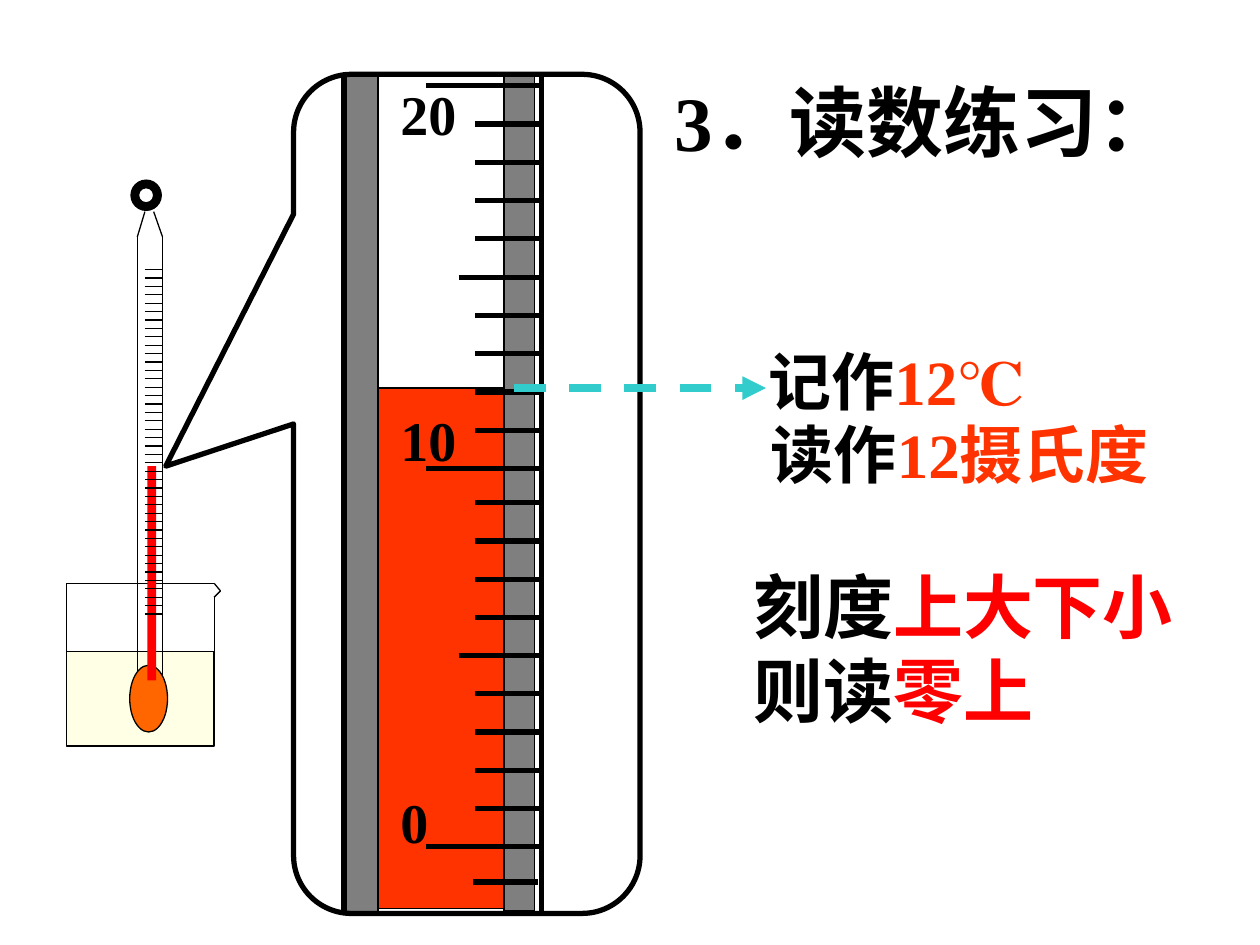
from lxml import etree
from pptx import Presentation
from pptx.dml.color import RGBColor
from pptx.enum.dml import MSO_LINE
from pptx.enum.shapes import MSO_CONNECTOR, MSO_SHAPE
from pptx.enum.text import MSO_ANCHOR, PP_ALIGN
from pptx.oxml.ns import qn
from pptx.util import Inches, Pt

STRAIGHT = MSO_CONNECTOR.STRAIGHT
RECT = MSO_SHAPE.RECTANGLE
OVAL = MSO_SHAPE.OVAL
DONUT = MSO_SHAPE.DONUT
BUBBLE = MSO_SHAPE.ROUNDED_RECTANGULAR_CALLOUT
DASH = MSO_LINE.DASH
LEFT = PP_ALIGN.LEFT
TOP = MSO_ANCHOR.TOP
MIDDLE = MSO_ANCHOR.MIDDLE

FONT = "Times New Roman"
COLORS = {
    "black": "000000",
    "water": "FFFFCC",
    "bulb": "FF6600",
    "red": "FF0000",
    "fluid": "FF3300",
    "arrow": "33CCCC",
}


def rgb(name):
    """Return the named colour."""
    return RGBColor.from_string(COLORS[name])


def add_line(shapes, start, end, width=0.75, color="black"):
    """Draw a straight line between two points in inches."""
    line = shapes.add_connector(STRAIGHT, *map(Inches, start + end))
    line.line.width = Pt(width)
    line.line.color.rgb = rgb(color)
    etree.SubElement(line._element.spPr, qn("a:effectLst"))
    return line


def add_path(shapes, points):
    """Join successive points with thin lines."""
    for start, end in zip(points, points[1:]):
        add_line(shapes, start, end)


def add_ticks(shapes, left, right, tops, width):
    """Draw level marks at the given heights."""
    for top in tops:
        add_line(shapes, (left, top), (right, top), width)


def add_form(shapes, kind, box, fill=None, width=0.75, clear=False):
    """Draw a preset shape, with an optional half-clear fill."""
    form = shapes.add_shape(kind, *map(Inches, box))
    form.shadow.inherit = False
    if fill:
        form.fill.solid()
        form.fill.fore_color.rgb = rgb(fill)
    else:
        form.fill.background()
    if clear:
        color = form._element.spPr.find(qn("a:solidFill"))[0]
        etree.SubElement(color, qn("a:alpha"), val="50000")
    if width:
        form.line.width = Pt(width)
        form.line.color.rgb = rgb("black")
    else:
        form.line.fill.background()
    return form


def set_text(shape, parts, size, anchor=TOP):
    """Fill a shape with bold runs of (text, colour)."""
    frame = shape.text_frame
    frame.word_wrap = True
    frame.vertical_anchor = anchor
    par = frame.paragraphs[0]
    par.alignment = LEFT
    for text, color in parts:
        run = par.add_run()
        run.text = text
        run.font.name = FONT
        run.font.size = Pt(size)
        run.font.bold = True
        run.font.color.rgb = rgb(color)


def add_text(shapes, box, parts, size):
    """Add a text box."""
    set_text(shapes.add_textbox(*map(Inches, box)), parts, size)


def draw_glass(shapes):
    """Draw the beaker with the small thermometer in it."""
    add_path(shapes, [(0.53, 4.63), (1.7, 4.63), (1.75, 4.69), (1.7, 4.74),
                      (1.7, 5.92), (0.53, 5.92), (0.53, 4.63)])
    add_form(shapes, RECT, (0.53, 5.17, 1.17, 0.75), "water", clear=True)
    for side, neck in ((1.09, 1.15), (1.29, 1.22)):
        add_path(shapes, [(side, 5.54), (side, 1.88), (neck, 1.68)])
    add_form(shapes, DONUT, (1.04, 1.43, 0.24, 0.24), "black")
    add_form(shapes, OVAL, (1.03, 5.28, 0.3, 0.53), "bulb")
    add_form(shapes, RECT, (1.17, 3.7, 0.07, 1.7), "red", width=0)
    add_ticks(shapes, 1.15, 1.29, [2.14 + i / 15 for i in range(42)], 0.75)


def draw_zoom(shapes):
    """Draw the enlarged scale in its callout."""
    add_form(shapes, RECT, (3, 3.08, 1, 4.13), "fluid")
    bubble = add_form(shapes, BUBBLE, (2.33, 0.59, 2.75, 6.66), width=3)
    for i, value in enumerate((-0.869, -0.033, 0.167)):
        bubble.adjustments[i] = value
    for left in (2.73, 4.3):
        add_line(shapes, (left, 0.58), (left, 7.23), 3)
    for left, top, width in ((2.75, 0.6, 0.25), (4, 0.58, 0.24)):
        add_form(shapes, RECT, (left, top, width, 6.65), "black", clear=True)
    upper = [0.68 + i * 3.04 / 10 for i in range(11)]
    lower = [3.99 + i * 2.73 / 9 for i in range(10)]
    add_ticks(shapes, 3.77, 4.3, upper + lower, 3)
    add_ticks(shapes, 3.38, 3.9, (0.68, 3.72, 6.72), 3)
    add_ticks(shapes, 3.64, 4.17, (2.2, 5.2), 3)
    add_ticks(shapes, 3.75, 4.27, (7,), 3)
    for label, top, width in (("20", 0.58, 0.67), ("10", 3.17, 0.83),
                              ("0", 6.2, 0.43)):
        add_text(shapes, (3.08, top, width, 0.63), [(label, "black")], 32)


def add_arrow(shapes):
    """Point from the fluid level to its reading."""
    arrow = add_line(shapes, (4.08, 3.08), (6.08, 3.08), 4.5, "arrow")
    arrow.line.dash_style = DASH
    etree.SubElement(arrow.line._get_or_add_ln(), qn("a:tailEnd"),
                     type="triangle")


def add_title(slide):
    """Place and format the title."""
    title = slide.shapes.title
    title.left, title.top = Inches(5.25), Inches(0.33)
    title.width, title.height = Inches(4.5), Inches(1.25)
    set_text(title, [("3．读数练习：", "black")], 44, MIDDLE)


def main():
    """Build the slide and save it."""
    deck = Presentation()
    deck.slide_width, deck.slide_height = Inches(10), Inches(7.5)
    slide = deck.slides.add_slide(deck.slide_layouts[5])
    shapes = slide.shapes
    add_title(slide)
    draw_glass(shapes.add_group_shape().shapes)
    draw_zoom(shapes.add_group_shape().shapes)
    add_arrow(shapes)
    add_text(shapes, (6, 2.67, 2.83, 0.7),
             [("记作", "black"), ("12℃", "fluid")], 36)
    add_text(shapes, (6.02, 3.25, 4.39, 0.7),
             [("读作", "black"), ("12摄氏度", "fluid")], 36)
    add_text(shapes, (5.88, 4.42, 3.62, 2.28),
             [("刻度", "black"), ("上大下小", "red"),
              ("则读", "black"), ("零上", "red")], 40)
    deck.save("out.pptx")


if __name__ == "__main__":
    main()
